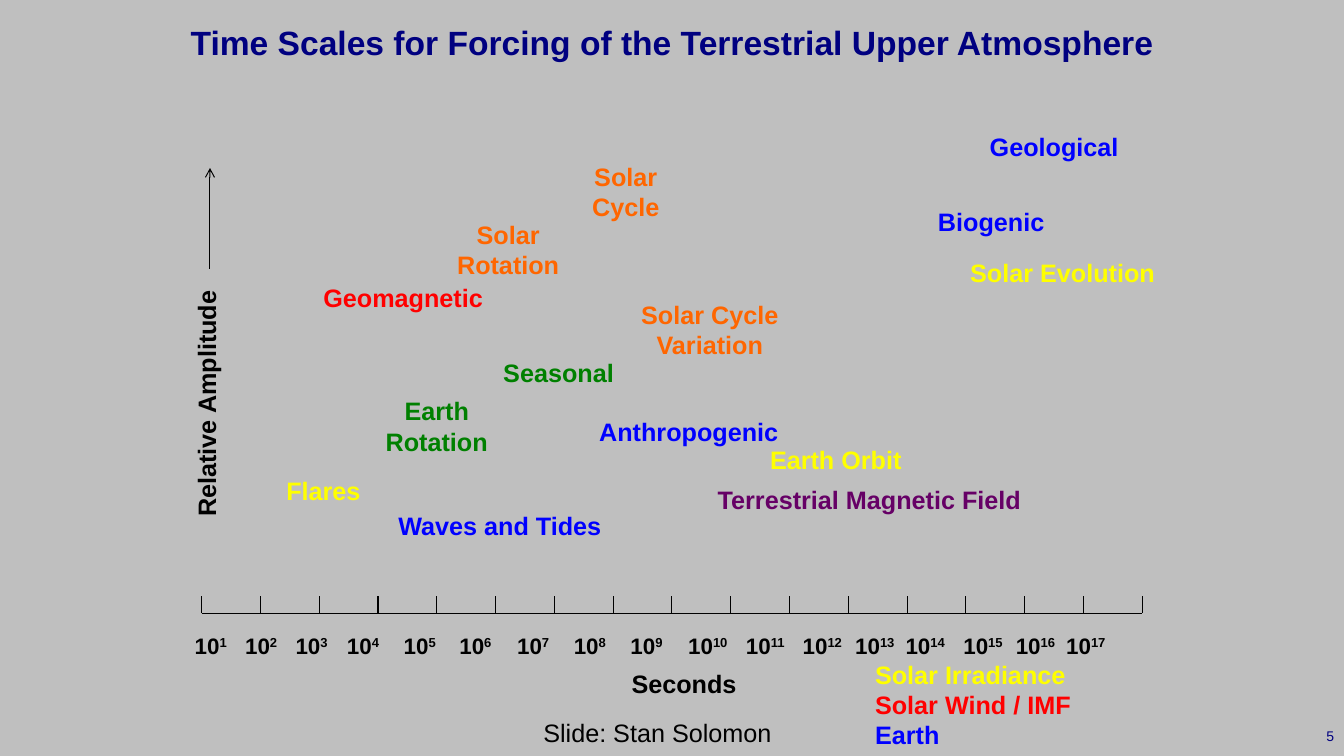
from lxml import etree
from pptx import Presentation
from pptx.dml.color import RGBColor
from pptx.enum.shapes import MSO_CONNECTOR
from pptx.enum.text import MSO_ANCHOR, PP_ALIGN
from pptx.oxml.ns import qn
from pptx.util import Pt

LINE = MSO_CONNECTOR.STRAIGHT
LEFT, MID, RIGHT = PP_ALIGN.LEFT, PP_ALIGN.CENTER, PP_ALIGN.RIGHT
CENTRE = MSO_ANCHOR.MIDDLE
SCALE = 9525
BLACK, NAVY, BLUE = "000000", "000080", "0000FF"
YELLOW, ORANGE, RED = "FFFF00", "FF6600", "FF0000"
GREEN, PURPLE = "008000", "660066"

FORCES = [
    ("Flares", YELLOW, (224, 448, 168, 38)),
    ("Solar Rotation", ORANGE, (416, 204, 136, 67)),
    ("Earth Rotation", GREEN, (352, 372, 128, 68)),
    ("Solar Cycle", ORANGE, (528, 149, 136, 67)),
    ("Seasonal", GREEN, (464, 336, 136, 38)),
    ("Earth Orbit", YELLOW, (712, 418, 168, 38)),
    ("Anthropogenic", BLUE, (560, 392, 192, 38)),
    ("Geological", BLUE, (928, 120, 152, 38)),
    ("Biogenic", BLUE, (856, 192, 176, 38)),
    ("Solar Evolution", YELLOW, (912, 240, 200, 38)),
    ("Solar Cycle Variation", ORANGE, (560, 280, 232, 68)),
    ("Geomagnetic", RED, (288, 264, 192, 38)),
    ("Terrestrial Magnetic Field", PURPLE, (656, 457, 344, 38)),
    ("Waves and Tides", BLUE, (344, 481, 264, 38)),
]
STOPS = [48, 96, 145, 199, 252, 307, 361, 415, 470, 525, 579, 629, 677, 732, 782, 830]


def px(n):
    return round(n * SCALE)


def rgb(code):
    return RGBColor.from_string(code)


def style(para, color, size=18, bold=True, align=LEFT):
    para.alignment = align
    font = para.font
    font.name, font.size, font.bold = "Arial", Pt(size), bold
    font.color.rgb = rgb(color)


def add_box(slide, box):
    shape = slide.shapes.add_textbox(*map(px, box))
    shape.text_frame.word_wrap = True
    return shape


def add_text(slide, box, text, color, **kind):
    shape = add_box(slide, box)
    para = shape.text_frame.paragraphs[0]
    para.text = text
    style(para, color, **kind)
    return shape


def add_line(slide, *ends):
    line = slide.shapes.add_connector(LINE, *map(px, ends))
    line.line.color.rgb = rgb(BLACK)
    line.line.width = Pt(0.75)
    etree.SubElement(line._element.spPr, qn("a:effectLst"))
    return line


def add_ruler(slide, box):
    left, top, width, height = box
    base, count = top + height, 16
    add_line(slide, left, base, left + width, base)
    for i in range(count + 1):
        x = left + i * width // count
        add_line(slide, x, top, x, base)


def add_powers(slide, box):
    para = add_box(slide, box).text_frame.paragraphs[0]
    tabs = etree.SubElement(para._p.get_or_add_pPr(), qn("a:tabLst"))
    for stop in STOPS:
        etree.SubElement(tabs, qn("a:tab"), pos=str(px(stop)), algn="l")
    style(para, BLACK, size=16)
    for power in range(1, len(STOPS) + 2):
        para.add_run().text = "10" if power == 1 else "\t10"
        run = para.add_run()
        run.text = str(power)
        run._r.get_or_add_rPr().set("baseline", "30000")


def add_scale(slide, box):
    left, top, width, height = box
    add_ruler(slide, (left, top, width, 16))
    add_powers(slide, (left - 16, top + 29, width + 40, 36))
    add_text(slide, (left + 400, top + 64, 128, 38), "Seconds", BLACK)


def add_side(slide, box):
    left, top, width, height = box
    mid = left + width // 2
    arrow = add_line(slide, mid, top + 96, mid, top)
    etree.SubElement(arrow.line._get_or_add_ln(), qn("a:tailEnd"), type="arrow")
    span = 237
    label = add_text(slide, (mid - 4 - span / 2, top + 204, span, width),
                     "Relative Amplitude", BLACK)
    label.text_frame.word_wrap = False
    label.rotation = 270


def add_key(slide, box):
    frame = add_box(slide, box).text_frame
    rows = [("Solar Irradiance", YELLOW), ("Solar Wind / IMF", RED), ("Earth", BLUE)]
    for i, (text, color) in enumerate(rows):
        para = frame.add_paragraph() if i else frame.paragraphs[0]
        para.text = text
        style(para, color)


def main():
    deck = Presentation()
    deck.slide_width, deck.slide_height = px(1280), px(720)
    slide = deck.slides.add_slide(deck.slide_layouts[6])
    fill = slide.background.fill
    fill.solid()
    fill.fore_color.rgb = rgb("BFBFBF")
    title = add_text(slide, (0, 16, 1280, 48),
                     "Time Scales for Forcing of the Terrestrial Upper Atmosphere",
                     NAVY, size=24, align=MID)
    title.text_frame.vertical_anchor = CENTRE
    add_text(slide, (1014, 688, 266, 32), "5", NAVY, size=10, bold=False, align=RIGHT)
    add_scale(slide, (192, 568, 896, 102))
    for text, color, box in FORCES:
        add_text(slide, box, text, color, align=MID)
    add_side(slide, (181, 160, 38, 341))
    add_key(slide, (824, 623, 296, 97))
    add_text(slide, (508, 678, 244, 38), "Slide: Stan Solomon", BLACK, bold=False)
    deck.save("out.pptx")


if __name__ == "__main__":
    main()
